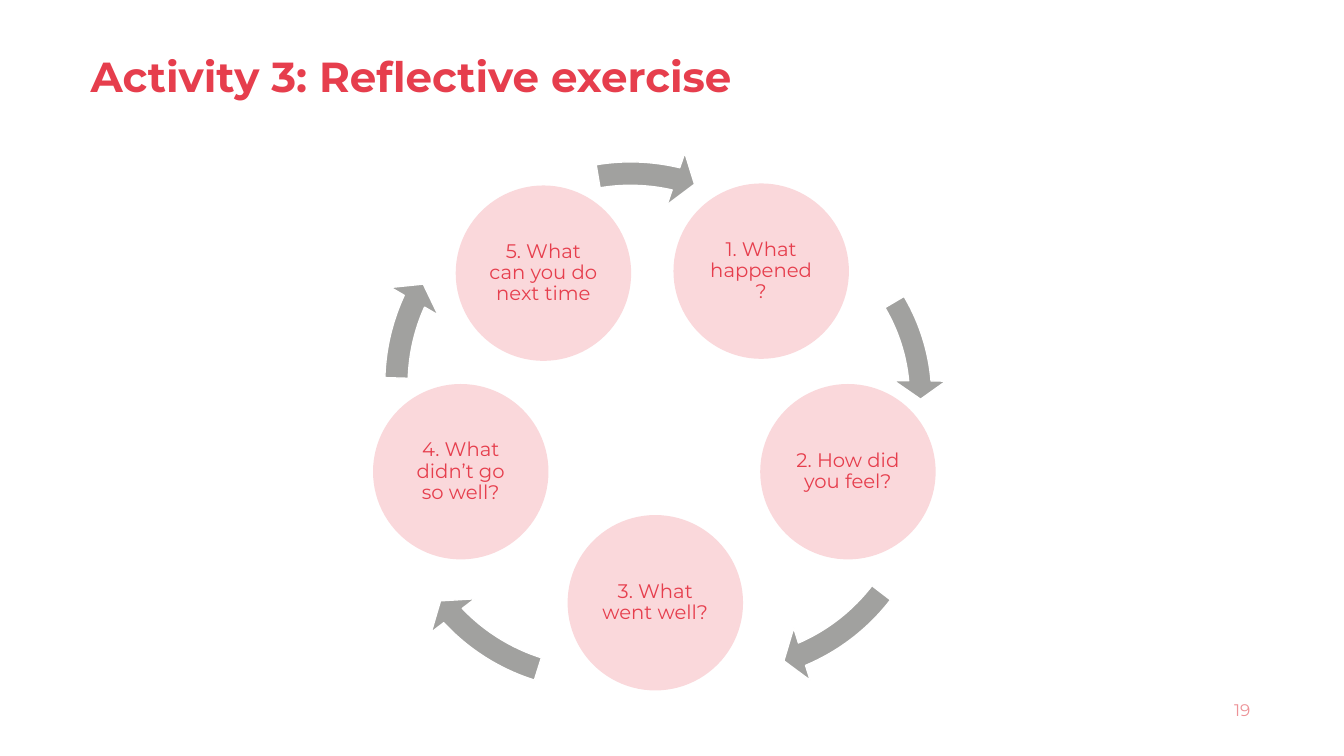
from pptx import Presentation
from pptx.dml.color import RGBColor
from pptx.enum.shapes import MSO_SHAPE
from pptx.enum.text import MSO_ANCHOR, MSO_AUTO_SIZE, PP_ALIGN
from pptx.util import Inches, Pt

ARROW, CIRCLE = MSO_SHAPE.CIRCULAR_ARROW, MSO_SHAPE.OVAL
MIDDLE, NO_AUTOFIT = MSO_ANCHOR.MIDDLE, MSO_AUTO_SIZE.NONE
LEFT, CENTER, RIGHT = PP_ALIGN.LEFT, PP_ALIGN.CENTER, PP_ALIGN.RIGHT
RED, PINK, PALE_RED, GREY, WHITE = "E63E4D", "FAD8DB", "ED9297", "A1A19F", "FFFFFF"


def color(value):
    return RGBColor.from_string(value)


def write(frame, text, size, ink, align, spacing=1.0, bold=False):
    frame.word_wrap = True
    frame.auto_size = NO_AUTOFIT
    frame.vertical_anchor = MIDDLE
    frame.text = text
    paragraph = frame.paragraphs[0]
    paragraph.alignment = align
    paragraph.line_spacing = spacing
    paragraph.font.name = "Montserrat"
    paragraph.font.size = Pt(size)
    paragraph.font.bold = bold
    paragraph.font.color.rgb = color(ink)


prs = Presentation()
prs.slide_width, prs.slide_height = Inches(13.33), Inches(7.5)
slide = prs.slides.add_slide(prs.slide_layouts[5])

# Title
title = slide.shapes.title
title.left, title.top = Inches(0.8), Inches(0.47)
title.width, title.height = Inches(11.5), Inches(0.63)
write(title.text_frame, "Activity 3: Reflective exercise", 30, RED, LEFT, 0.9, True)

# Arrows of the cycle: left, top, diameter, start and end in degrees, rotation
arrows = [
    (5.14, 1.82, 4.25, 329.44, 354.88, 0),
    (4.95, 2.45, 4.47, 37.56, 66.91, 0),
    (3.69, 2.53, 4.47, 107.5, 136.84, 0),
    (3.66, 1.57, 4.47, 175.4, 198.37, 6.2),
    (4.02, 1.45, 4.47, 260.54, 283.24, 0),
]
for left, top, diameter, start, end, rotation in arrows:
    arrow = slide.shapes.add_shape(
        ARROW, Inches(left), Inches(top), Inches(diameter), Inches(diameter))
    # Band width, head angle, end angle, start angle, head width;
    # one degree is 0.6 of an adjustment unit
    for index, value in enumerate((5.2 / 100, 5.6 * 0.6, end * 0.6, start * 0.6, 6.1 / 100)):
        arrow.adjustments[index] = value
    arrow.rotation = rotation
    arrow.shadow.inherit = False
    arrow.fill.solid()
    arrow.fill.fore_color.rgb = color(GREY)
    arrow.line.color.rgb = color(WHITE)
    arrow.line.width = Pt(1)

# Steps of the cycle
STEP_SIZE = Inches(1.74)
steps = [
    ("1. What happened?", 6.68, 1.82),
    ("2. How did you feel?", 7.54, 3.81),
    ("3. What went well?", 5.63, 5.11),
    ("4. What didn’t go so well?", 3.7, 3.81),
    ("5. What can you do next time", 4.52, 1.84),
]
for question, left, top in steps:
    step = slide.shapes.add_shape(CIRCLE, Inches(left), Inches(top), STEP_SIZE, STEP_SIZE)
    step.shadow.inherit = False
    step.fill.solid()
    step.fill.fore_color.rgb = color(PINK)
    step.line.fill.background()
    step.text_frame.margin_left = step.text_frame.margin_right = Inches(0.08)
    write(step.text_frame, question, 14, RED, CENTER, 0.9)

# Page number
page_number = slide.shapes.add_textbox(Inches(9.5), Inches(6.84), Inches(3), Inches(0.4))
write(page_number.text_frame, "19", 12, PALE_RED, RIGHT)

prs.save("out.pptx")
